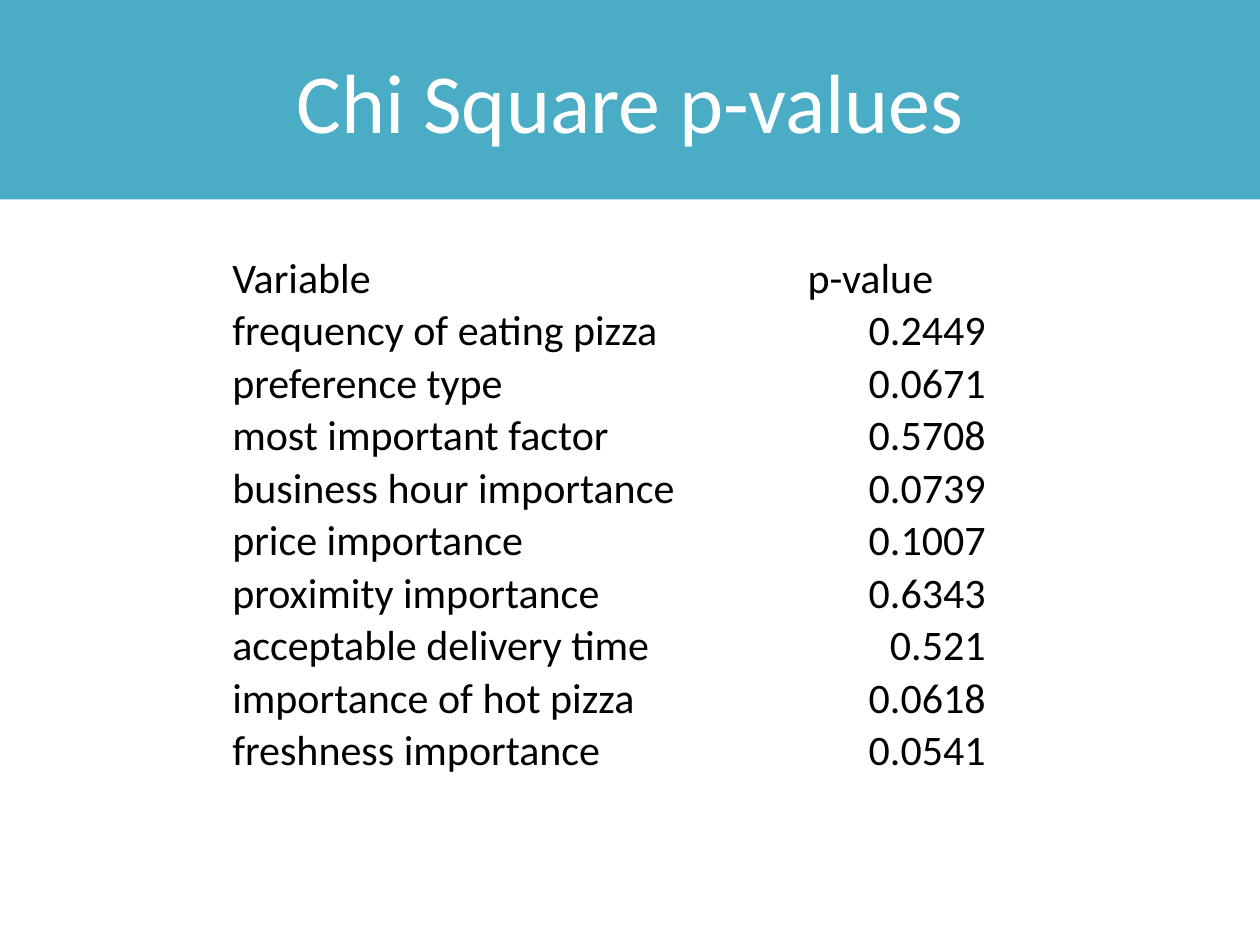
from dataclasses import dataclass

from pptx import Presentation
from pptx.dml.color import RGBColor
from pptx.enum import text
from pptx.util import Pt


@dataclass(frozen=True)
class Theme:
    font: str = "Calibri"
    band: RGBColor = RGBColor(0x4B, 0xAC, 0xC6)
    title: RGBColor = RGBColor(0xFF, 0xFF, 0xFF)
    body: RGBColor = RGBColor(0, 0, 0)
    title_size: Pt = Pt(48)
    body_size: Pt = Pt(24)


theme = Theme()


def style(p, size, color, align):
    p.font.name = theme.font
    p.font.size = size
    p.font.color.rgb = color
    p.alignment = align


prs = Presentation()
prs.slide_width, prs.slide_height = Pt(720), Pt(540)
s = prs.slides.add_slide(prs.slide_layouts[5])

# Title band
title = s.shapes.title
title.left, title.top, title.width, title.height = Pt(0), Pt(0), Pt(720), Pt(114)
title.fill.solid()
title.fill.fore_color.rgb = theme.band
tf = title.text_frame
tf.text = "Chi Square p-values"
tf.vertical_anchor = text.MSO_ANCHOR.MIDDLE
style(tf.paragraphs[0], theme.title_size, theme.title, text.PP_ALIGN.CENTER)

# Table rows: variable, p-value, columns the variable spans
rows = [
    ("Variable", "p-value", 1),
    ("frequency of eating pizza", "0.2449", 3),
    ("preference type", "0.0671", 2),
    ("most important factor", "0.5708", 2),
    ("business hour importance", "0.0739", 3),
    ("price importance", "0.1007", 2),
    ("proximity importance", "0.6343", 2),
    ("acceptable delivery time", "0.521", 3),
    ("importance of hot pizza", "0.0618", 3),
    ("freshness importance", "0.0541", 2),
]
col_widths = [122.4, 103.2, 103.2, 103.2]
row_height = 30

table = s.shapes.add_table(
    len(rows), len(col_widths), Pt(132), Pt(144),
    Pt(sum(col_widths)), Pt(row_height * len(rows))).table
table.first_row = table.horz_banding = False
for column, width in zip(table.columns, col_widths):
    column.width = Pt(width)

# Plain cells: no fill, thin margins, numbers to the right
for i, (variable, value, span) in enumerate(rows):
    table.rows[i].height = Pt(row_height)
    for j, content in enumerate([variable, "", "", value]):
        cell = table.cell(i, j)
        cell.fill.background()
        cell.margin_left = cell.margin_right = cell.margin_top = Pt(0.72)
        cell.margin_bottom = Pt(0)
        cell.vertical_anchor = text.MSO_ANCHOR.BOTTOM
        cell.text = content
        is_number = i > 0 and j == 3
        style(cell.text_frame.paragraphs[0], theme.body_size, theme.body,
              text.PP_ALIGN.RIGHT if is_number else text.PP_ALIGN.LEFT)
    if span > 1:
        table.cell(i, 0).merge(table.cell(i, span - 1))

prs.save("out.pptx")
